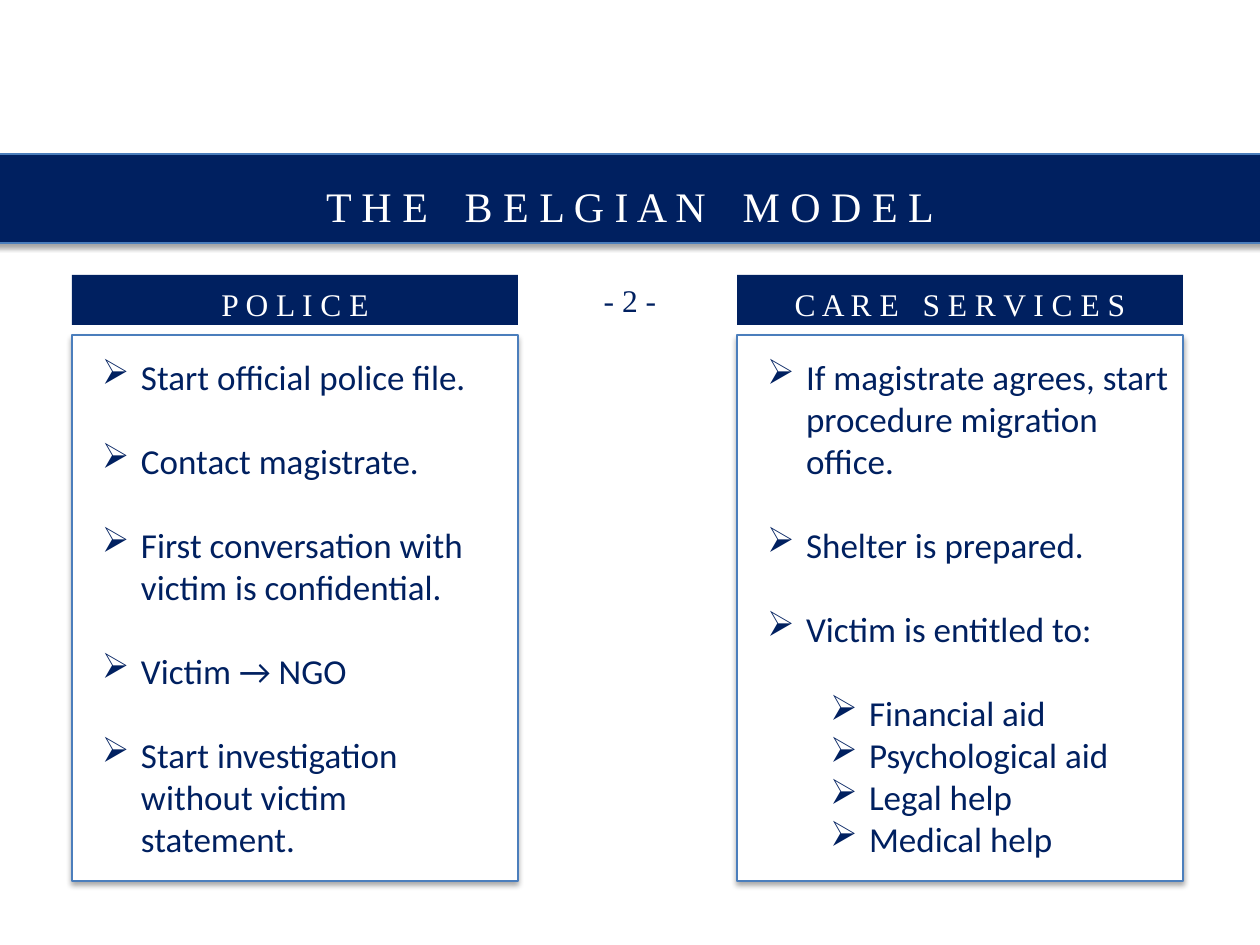
from lxml.etree import SubElement
from pptx import Presentation
from pptx.dml.color import RGBColor
from pptx.enum.shapes import MSO_SHAPE
from pptx.enum.text import MSO_ANCHOR, PP_ALIGN
from pptx.oxml import parse_xml
from pptx.oxml.ns import nsdecls, qn
from pptx.util import Emu, Pt

NAVY, BLUE, WHITE = "002060", "4B7EBC", "FFFFFF"
SERIF, SANS = "Times New Roman", "Calibri"


def px(n):
    return Emu(round(n * 914400 / 126))


def rgb(code):
    return RGBColor.from_string(code)


deck = Presentation()
deck.slide_width, deck.slide_height = px(1260), px(945)
slide = deck.slides.add_slide(deck.slide_layouts[6])
shapes = slide.shapes

# Title band and the two column boxes: outlined, with a soft shadow
bands = []
for x, y, w, h, fill, line in [
    (-13, 154, 1281, 89, NAVY, 0.75),
    (72, 335, 446, 546, WHITE, 0),
    (737, 335, 446, 546, WHITE, 0),
]:
    box = shapes.add_shape(MSO_SHAPE.RECTANGLE, px(x), px(y), px(w), px(h))
    box.fill.solid()
    box.fill.fore_color.rgb = rgb(fill)
    box.line.color.rgb = rgb(BLUE)
    box.line.width = Pt(line)
    box._element.spPr.append(parse_xml(
        f'<a:effectLst {nsdecls("a")}><a:outerShdw blurRad="39370" dist="22860" '
        'dir="5400000" rotWithShape="0"><a:srgbClr val="000000">'
        '<a:alpha val="35000"/></a:srgbClr></a:outerShdw></a:effectLst>'))
    bands.append(box)

# Headings: spaced capitals, with wider gaps between words
for x, y, w, h, fill, ink, size, gap, words in [
    (63, 163, 1134, 72, None, WHITE, 24, 28, ["T H E", "B E L G I A N", "M O D E L"]),
    (72, 275, 446, 50, NAVY, WHITE, 18, 18, ["P O L I C E"]),
    (737, 275, 446, 50, NAVY, WHITE, 18, 18, ["C A R E", "S E R V I C E S"]),
    (591, 271, 78, 50, None, NAVY, 18, 18, ["- 2 -"]),
]:
    if fill:
        head = shapes.add_shape(MSO_SHAPE.RECTANGLE, px(x), px(y), px(w), px(h))
        head.shadow.inherit = False
        head.fill.solid()
        head.fill.fore_color.rgb = rgb(fill)
        head.line.fill.background()
    else:
        head = shapes.add_textbox(px(x), px(y), px(w), px(h))
    frame = head.text_frame
    frame.word_wrap = True
    frame.vertical_anchor = MSO_ANCHOR.TOP
    frame.margin_top = px(10)
    para = frame.paragraphs[0]
    para.alignment = PP_ALIGN.CENTER
    for i, word in enumerate(words):
        parts = [(" ", gap), (word, size)] if i else [(word, size)]
        for text, points in parts:
            run = para.add_run()
            run.text = text
            run.font.name = SERIF
            run.font.size = Pt(points)
            run.font.color.rgb = rgb(ink)
            if text == " ":
                # One space tracked out to the width of three
                run._r.get_or_add_rPr().set("spc", str(points * 50))

# Column lists: level, space after in points, text
police = [
    (0, 24, "Start official police file."),
    (0, 24, "Contact magistrate."),
    (0, 24, "First conversation with victim is confidential."),
    (0, 24, "Victim → NGO"),
    (0, 0, "Start investigation without victim statement."),
]
care = [
    (0, 24, "If magistrate agrees, start procedure migration office."),
    (0, 24, "Shelter is prepared."),
    (0, 24, "Victim is entitled to:"),
    (1, 0, "Financial aid"),
    (1, 0, "Psychological aid"),
    (1, 0, "Legal help"),
    (1, 0, "Medical help"),
]
for box, items in zip(bands[1:], [police, care]):
    frame = box.text_frame
    frame.word_wrap = True
    frame.vertical_anchor = MSO_ANCHOR.TOP
    frame.margin_left, frame.margin_top = px(30), px(20)
    frame.margin_right, frame.margin_bottom = px(13), px(6)
    for i, (level, after, text) in enumerate(items):
        para = frame.add_paragraph() if i else frame.paragraphs[0]
        para.level = level
        para.alignment = PP_ALIGN.LEFT
        para.space_after = Pt(after)
        props = para._p.get_or_add_pPr()
        props.set("marL", str(px(39 + 63 * level)))
        props.set("indent", str(px(-39)))
        SubElement(props, qn("a:buChar")).set("char", "➢")
        run = para.add_run()
        run.text = text
        run.font.name = SANS
        run.font.size = Pt(20)
        run.font.color.rgb = rgb(NAVY)

deck.save("out.pptx")
